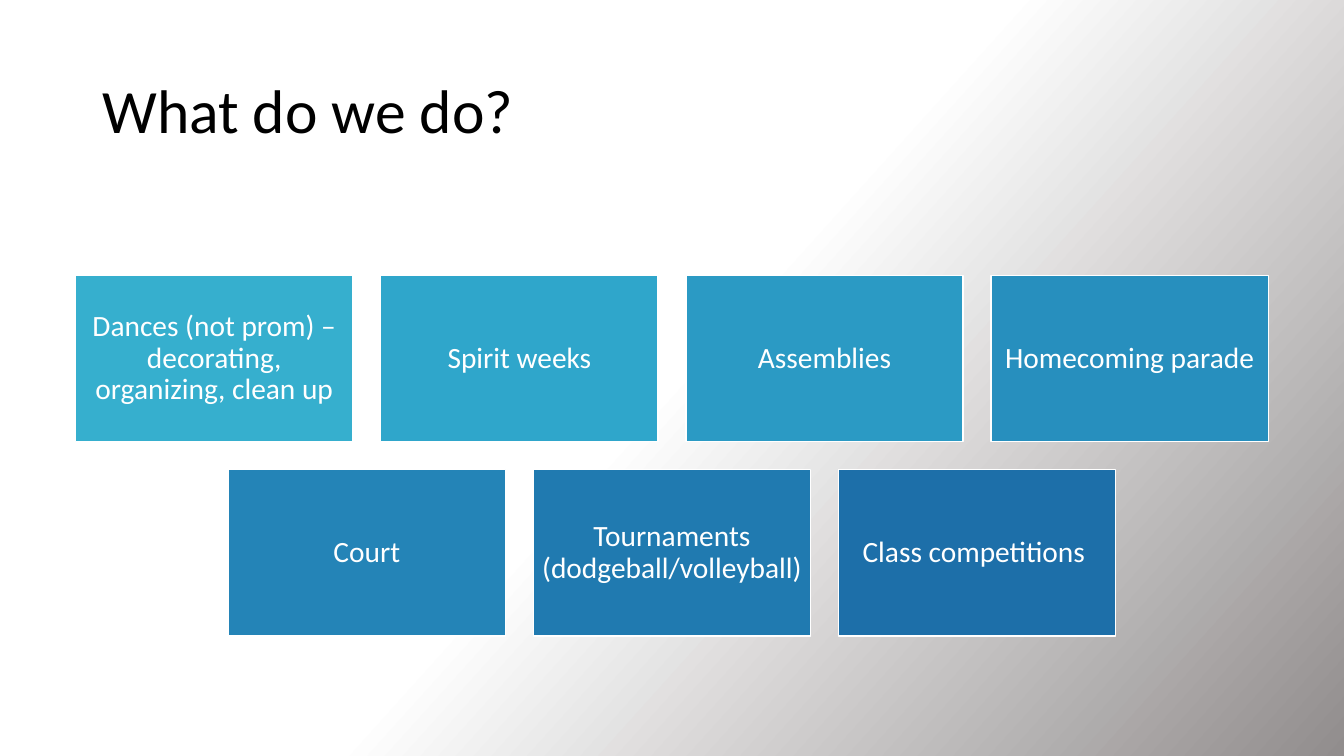
import copy

import pptx
import pptx.dml.color
import pptx.enum.shapes
import pptx.enum.text
import pptx.oxml.ns
import pptx.util

Pt = pptx.util.Pt
RGBColor = pptx.dml.color.RGBColor
ALIGN = pptx.enum.text.PP_ALIGN
MIDDLE = pptx.enum.text.MSO_ANCHOR.MIDDLE

WHITE = RGBColor(0xFF, 0xFF, 0xFF)
BLACK = RGBColor(0x00, 0x00, 0x00)
WARM_GRAY = RGBColor(0x91, 0x8D, 0x8D)
FONT = "Calibri"

ACTIVITIES = [
    ("Dances (not prom) – decorating, organizing, clean up", RGBColor(0x36, 0xAF, 0xCE)),
    ("Spirit weeks", RGBColor(0x2F, 0xA6, 0xCB)),
    ("Assemblies", RGBColor(0x2B, 0x9A, 0xC4)),
    ("Homecoming parade", RGBColor(0x27, 0x8F, 0xBE)),
    ("Court", RGBColor(0x24, 0x84, 0xB7)),
    ("Tournaments (dodgeball/volleyball)", RGBColor(0x20, 0x7A, 0xB0)),
    ("Class competitions ", RGBColor(0x1D, 0x6F, 0xA9)),
]
COLUMNS = 4
CARD_WIDTH = 198.15
CARD_HEIGHT = 118.9
GAP = 19.8


def paint_background(page):
    fill = page.background.fill
    fill.gradient()
    fill.gradient_angle = 318
    stop_list = page.element.find(".//" + pptx.oxml.ns.qn("a:gsLst"))
    stop_list.append(copy.deepcopy(stop_list[-1]))
    for stop, position, color in zip(
        fill.gradient_stops, (0, 0.5, 1), (WHITE, WHITE, WARM_GRAY)
    ):
        stop.position = position
        stop.color.rgb = color


def write_text(frame, text, size, color, alignment):
    frame.text = text
    frame.word_wrap = True
    frame.auto_size = pptx.enum.text.MSO_AUTO_SIZE.NONE
    frame.vertical_anchor = MIDDLE
    para = frame.paragraphs[0]
    para.alignment = alignment
    para.line_spacing = 0.9
    span = para.runs[0]
    span.font.name = FONT
    span.font.size = Pt(size)
    span.font.color.rgb = color


def place_title(page, left, top, width, height):
    title = page.shapes.title
    title.left, title.top = Pt(left), Pt(top)
    title.width, title.height = Pt(width), Pt(height)
    write_text(title.text_frame, "What do we do?", 44, BLACK, ALIGN.LEFT)


def add_card(page, left, top, text, color):
    card = page.shapes.add_shape(
        pptx.enum.shapes.MSO_SHAPE.RECTANGLE,
        Pt(left), Pt(top), Pt(CARD_WIDTH), Pt(CARD_HEIGHT),
    )
    card.shadow.inherit = False
    card.fill.solid()
    card.fill.fore_color.rgb = color
    card.line.color.rgb = WHITE
    card.line.width = Pt(1)
    frame = card.text_frame
    frame.margin_left = frame.margin_right = Pt(6.3)
    frame.margin_top = frame.margin_bottom = Pt(6.3)
    write_text(frame, text, 21, WHITE, ALIGN.CENTER)


def place_activities(page, left, top, width):
    for start in range(0, len(ACTIVITIES), COLUMNS):
        row = ACTIVITIES[start:start + COLUMNS]
        row_width = len(row) * (CARD_WIDTH + GAP) - GAP
        row_left = left + (width - row_width) / 2
        row_top = top + start // COLUMNS * (CARD_HEIGHT + GAP)
        for column, (text, color) in enumerate(row):
            add_card(page, row_left + column * (CARD_WIDTH + GAP), row_top, text, color)


def main():
    deck = pptx.Presentation()
    deck.slide_width, deck.slide_height = Pt(960), Pt(540)
    page = deck.slides.add_slide(deck.slide_layouts.get_by_name("Title Only"))
    paint_background(page)
    place_title(page, 66, 28.8, 828, 104.4)
    place_activities(page, 54, 196.6, 852)
    deck.save("out.pptx")


if __name__ == "__main__":
    main()
